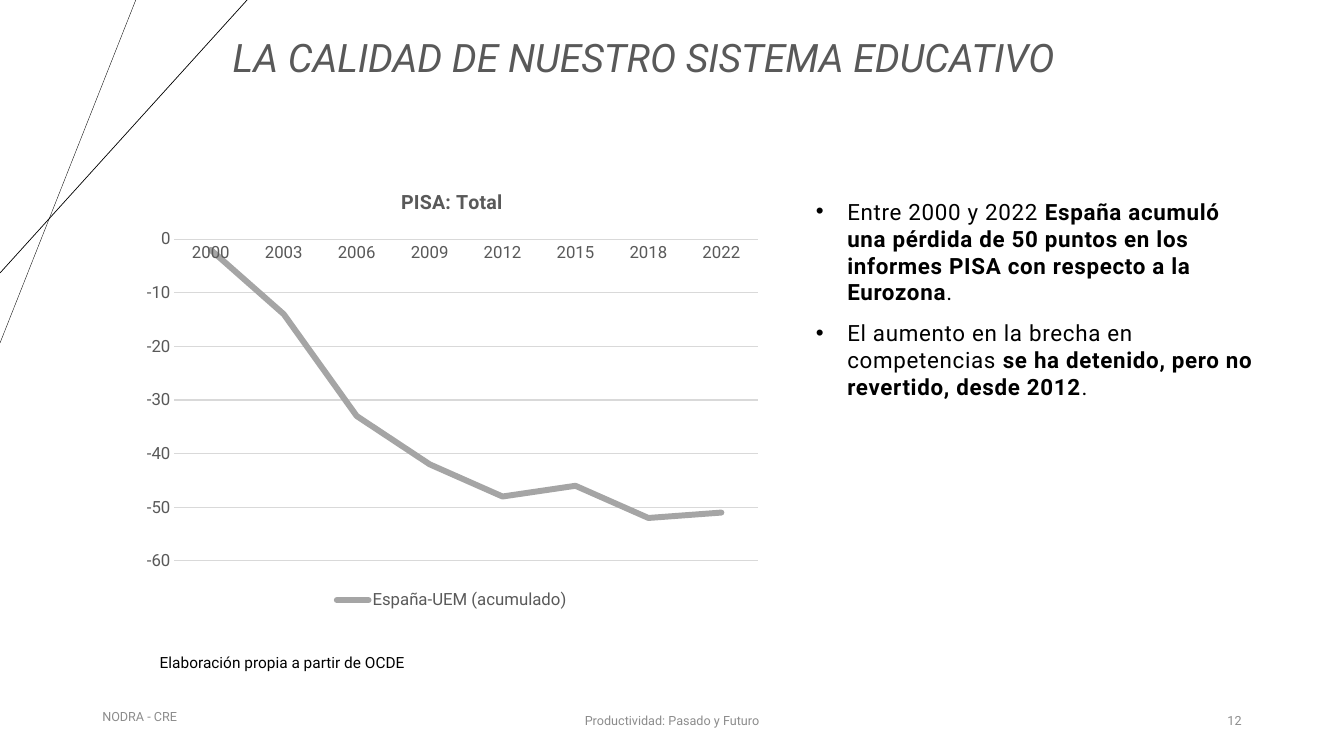
from lxml import etree
from pptx import Presentation
from pptx.chart.data import CategoryChartData
from pptx.dml.color import RGBColor
from pptx.enum.chart import XL_CHART_TYPE, XL_LEGEND_POSITION, XL_TICK_MARK
from pptx.enum.shapes import MSO_CONNECTOR
from pptx.enum.text import MSO_ANCHOR, MSO_AUTO_SIZE, PP_ALIGN
from pptx.oxml.ns import qn
from pptx.util import Pt

LINE_CHART = XL_CHART_TYPE.LINE
LEGEND_BOTTOM = XL_LEGEND_POSITION.BOTTOM
NO_TICK = XL_TICK_MARK.NONE
STRAIGHT = MSO_CONNECTOR.STRAIGHT
TOP, MIDDLE = MSO_ANCHOR.TOP, MSO_ANCHOR.MIDDLE
LEFT, CENTER, RIGHT = PP_ALIGN.LEFT, PP_ALIGN.CENTER, PP_ALIGN.RIGHT
NO_AUTOFIT = MSO_AUTO_SIZE.NONE

FONT = "Roboto"
BLACK = RGBColor(0x00, 0x00, 0x00)
DARK_GRAY = RGBColor(0x59, 0x59, 0x59)
FOOTER_GRAY = RGBColor(0x8C, 0x8C, 0x8C)
SERIES_GRAY = RGBColor(0xA5, 0xA5, 0xA5)
GRID_GRAY = RGBColor(0xD9, 0xD9, 0xD9)

YEARS = ["2000", "2003", "2006", "2009", "2012", "2015", "2018", "2022"]
PISA_GAP = [-2, -14, -33, -42, -48, -46, -52, -51]
PLOT_LAYOUT = {"x": 0.065, "y": 0.155, "w": 0.915, "h": 0.725}
BULLETS = [
    [
        ("Entre 2000 y 2022 ", False),
        ("España acumuló una pérdida de 50 puntos en los informes PISA "
         "con respecto a la Eurozona", True),
        (".", False),
    ],
    [
        ("El aumento en la brecha en competencias ", False),
        ("se ha detenido, pero no revertido, desde 2012", True),
        (".", False),
    ],
]


def place(sp, left, top, width, height):
    sp.left, sp.top = Pt(left), Pt(top)
    sp.width, sp.height = Pt(width), Pt(height)


def style_font(font, size, color, bold=False, italic=False):
    font.name, font.size = FONT, Pt(size)
    font.bold, font.italic = bold, italic
    font.color.rgb = color


def add_run(p, text, size, color, bold=False, italic=False):
    r = p.add_run()
    r.text = text
    style_font(r.font, size, color, bold, italic)
    return r


def setup_frame(tf, anchor):
    tf.word_wrap = True
    tf.auto_size = NO_AUTOFIT
    tf.vertical_anchor = anchor


def add_line(s, x1, y1, x2, y2, width):
    line = s.shapes.add_connector(STRAIGHT, Pt(x1), Pt(y1), Pt(x2), Pt(y2))
    line.line.color.rgb = BLACK
    line.line.width = Pt(width)
    etree.SubElement(line._element.spPr, qn("a:effectLst"))


def add_title(s, text):
    sp = s.shapes.title
    place(sp, 159, 6.5, 748, 72)
    setup_frame(sp.text_frame, MIDDLE)
    p = sp.text_frame.paragraphs[0]
    p.alignment = LEFT
    p.line_spacing = 0.9
    add_run(p, text, 28, DARK_GRAY, italic=True)


def add_bullet(p, runs):
    p.alignment = LEFT
    p.space_before = Pt(10)
    pPr = p._p.get_or_add_pPr()
    pPr.set("marL", str(Pt(22.5)))
    pPr.set("indent", str(-Pt(22.5)))
    etree.SubElement(pPr, qn("a:buFont"), typeface="Arial")
    etree.SubElement(pPr, qn("a:buChar"), char="•")
    for text, bold in runs:
        r = add_run(p, text, 16, BLACK, bold)
        r._r.get_or_add_rPr().set("spc", "50")


def add_body(s, bullets):
    sp = s.placeholders[1]
    place(sp, 575.5, 137.75, 332, 245.5)
    tf = sp.text_frame
    setup_frame(tf, TOP)
    for i, runs in enumerate(bullets):
        add_bullet(tf.add_paragraph() if i else tf.paragraphs[0], runs)


def add_label(s, box, text, size, color, align=LEFT, anchor=MIDDLE):
    sp = s.shapes.add_textbox(*map(Pt, box))
    setup_frame(sp.text_frame, anchor)
    p = sp.text_frame.paragraphs[0]
    p.alignment = align
    add_run(p, text, size, color)


def style_axis(axis):
    axis.major_tick_mark = axis.minor_tick_mark = NO_TICK
    style_font(axis.tick_labels.font, 12, DARK_GRAY)


def set_plot_layout(chart):
    area = chart._chartSpace.chart.plotArea
    for old in area.findall(qn("c:layout")):
        area.remove(old)
    layout = etree.Element(qn("c:layout"))
    manual = etree.SubElement(layout, qn("c:manualLayout"))
    etree.SubElement(manual, qn("c:layoutTarget"), val="inner")
    for axis in "xy":
        etree.SubElement(manual, qn(f"c:{axis}Mode"), val="edge")
    for key, value in PLOT_LAYOUT.items():
        etree.SubElement(manual, qn(f"c:{key}"), val=str(value))
    area.insert(0, layout)


def add_pisa_chart(s):
    data = CategoryChartData(number_format="0")
    data.categories = YEARS
    data.add_series("España-UEM (acumulado)", PISA_GAP)
    frame = s.shapes.add_chart(
        LINE_CHART, Pt(95), Pt(121.75), Pt(455.5), Pt(317), data)
    chart = frame.chart
    style_font(chart.font, 10, BLACK)
    chart.has_title = True
    p = chart.chart_title.text_frame.paragraphs[0]
    add_run(p, "PISA: Total", 14, DARK_GRAY, bold=True)
    chart.chart_title.include_in_layout = False
    chart.has_legend = True
    chart.legend.position = LEGEND_BOTTOM
    chart.legend.include_in_layout = False
    style_font(chart.legend.font, 12, DARK_GRAY)

    years, gap = chart.category_axis, chart.value_axis
    style_axis(years)
    years.format.line.color.rgb = GRID_GRAY
    years.format.line.width = Pt(0.75)
    style_axis(gap)
    gap.minimum_scale, gap.maximum_scale, gap.major_unit = -60, 0, 10
    gap.tick_labels.number_format = "0"
    gap.tick_labels.number_format_is_linked = False
    gap.format.line.fill.background()
    gap.major_gridlines.format.line.color.rgb = GRID_GRAY
    gap.major_gridlines.format.line.width = Pt(0.75)

    plot = chart.plots[0]
    plot.vary_by_categories = False
    series = plot.series[0]
    series.smooth = False
    series.format.line.color.rgb = SERIES_GRAY
    series.format.line.width = Pt(4.25)
    series.format.line._ln.set("cap", "rnd")
    set_plot_layout(chart)


def main():
    prs = Presentation()
    prs.slide_width, prs.slide_height = Pt(960), Pt(540)
    s = prs.slides.add_slide(prs.slide_layouts[1])
    add_line(s, 97, 0, 0, 245, 0.25)
    add_line(s, 176.5, 0, 0, 195, 0.5)
    add_title(s, "LA CALIDAD DE NUESTRO SISTEMA EDUCATIVO")
    add_body(s, BULLETS)
    add_pisa_chart(s)
    add_label(s, (107, 463, 444, 21), "Elaboración propia a partir de OCDE",
              11, BLACK, anchor=TOP)
    add_label(s, (66, 497.5, 216, 29), "NODRA - CRE", 9, FOOTER_GRAY)
    add_label(s, (318, 500, 324, 29), "Productividad: Pasado y Futuro",
              9, FOOTER_GRAY, CENTER)
    add_label(s, (678, 500, 216, 29), "12", 9, FOOTER_GRAY, RIGHT)
    prs.save("out.pptx")


if __name__ == "__main__":
    main()
